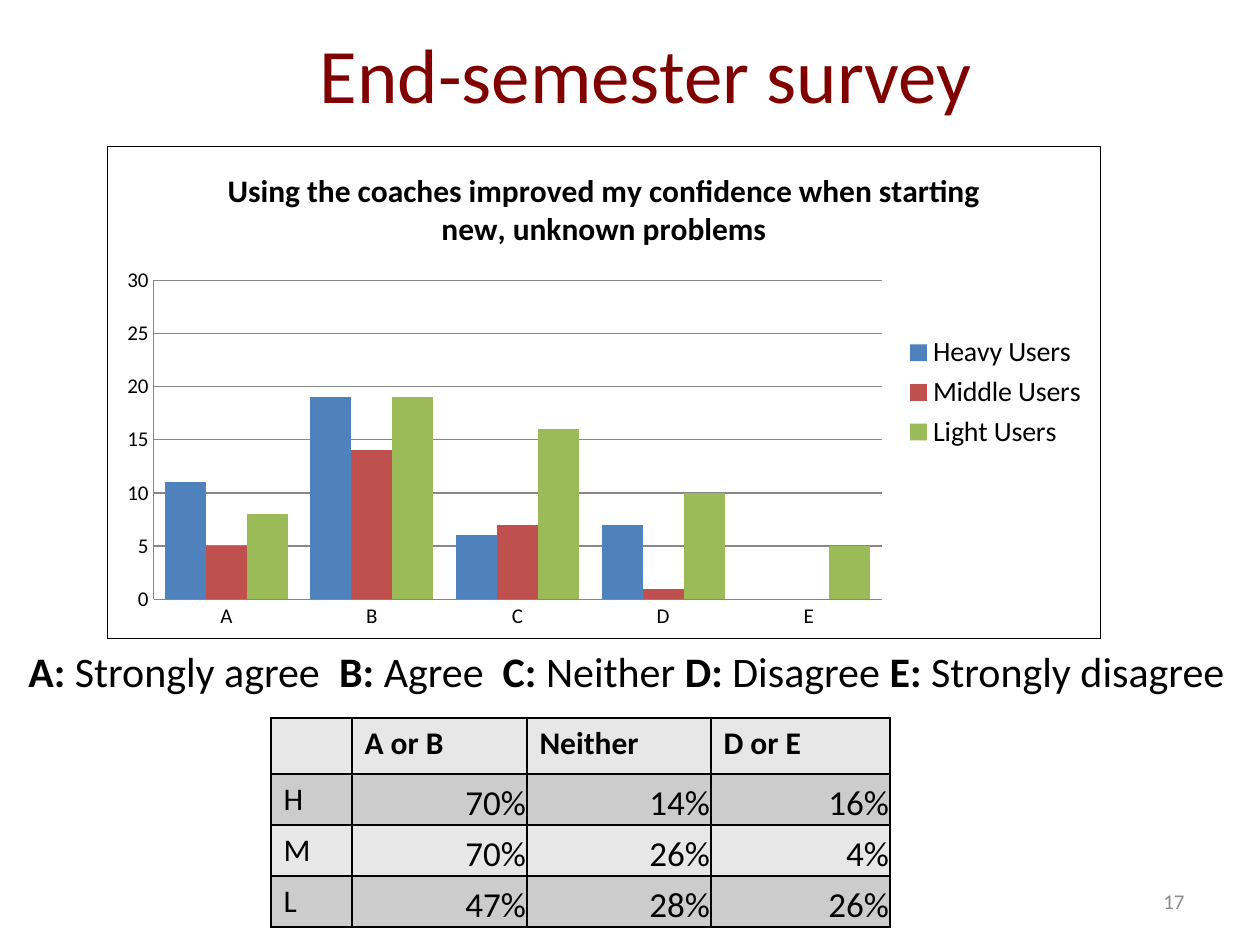
from dataclasses import dataclass
from typing import NamedTuple

from lxml.etree import SubElement
from pptx import Presentation
from pptx.chart.chart import Chart
from pptx.chart.data import CategoryChartData
from pptx.dml.color import RGBColor
from pptx.enum.chart import XL_CHART_TYPE, XL_LEGEND_POSITION, XL_TICK_MARK
from pptx.enum.text import MSO_ANCHOR, PP_ALIGN
from pptx.oxml import parse_xml
from pptx.oxml.ns import nsdecls, qn
from pptx.slide import Slide
from pptx.table import _Cell
from pptx.text.text import Font, _Paragraph
from pptx.util import Emu, Pt

PX_PER_INCH = 126


@dataclass(frozen=True)
class Theme:
    font: str = "Calibri"
    title: str = "800000"
    ink: str = "000000"
    muted: str = "8C8C8C"
    grid: str = "878787"
    light_row: str = "E7E7E7"
    dark_row: str = "CCCCCC"
    title_size: int = 44
    key_size: int = 24
    percent_size: int = 20
    label_size: int = 18
    legend_size: int = 16
    small_size: int = 12


class Box(NamedTuple):
    left: int
    top: int
    width: int
    height: int


class Series(NamedTuple):
    name: str
    values: tuple[int, ...]
    color: str


class Answer(NamedTuple):
    letter: str
    meaning: str


THEME = Theme()
TITLE_BOX = Box(64, 0, 1164, 146)
NUMBER_BOX = Box(903, 876, 294, 50)
CHART_BOX = Box(107, 146, 994, 493)
PLOT_BOX = Box(46, 134, 729, 320)  # inside the chart
KEY_BOX = Box(16, 639, 1237, 63)
TABLE_BOX = Box(271, 718, 619, 209)
COLUMN_WIDTHS = (81, 175, 184, 179)
ROW_HEIGHTS = (56, 51, 51, 51)

CATEGORIES = ("A", "B", "C", "D", "E")
SERIES = (
    Series("Heavy Users", (11, 19, 6, 7, 0), "4F81BD"),
    Series("Middle Users", (5, 14, 7, 1, 0), "C0504D"),
    Series("Light Users", (8, 19, 16, 10, 5), "9BBB59"),
)
ANSWERS = (
    Answer("A:", " Strongly agree  "),
    Answer("B:", " Agree  "),
    Answer("C:", " Neither "),
    Answer("D:", " Disagree "),
    Answer("E:", " Strongly disagree"),
)
TABLE_ROWS = (
    ("", "A or B", "Neither", "D or E"),
    ("H", "70%", "14%", "16%"),
    ("M", "70%", "26%", "4%"),
    ("L", "47%", "28%", "26%"),
)


def px(length: int) -> Emu:
    return Emu(round(length * 914400 / PX_PER_INCH))


def emu_box(box: Box) -> list[Emu]:
    return [px(length) for length in box]


def style_font(font: Font, size: int, color: str = THEME.ink, bold: bool = False) -> None:
    font.name = THEME.font
    font.size = Pt(size)
    font.bold = bold
    font.color.rgb = RGBColor.from_string(color)


def add_span(para: _Paragraph, text: str, size: int, color: str = THEME.ink, bold: bool = False) -> None:
    span = para.add_run()
    span.text = text
    style_font(span.font, size, color, bold)


def add_title(slide: Slide) -> None:
    title = slide.shapes.title
    title.left, title.top, title.width, title.height = emu_box(TITLE_BOX)
    title.text_frame.text = "End-semester survey"
    title.text_frame.vertical_anchor = MSO_ANCHOR.MIDDLE
    para = title.text_frame.paragraphs[0]
    para.alignment = PP_ALIGN.CENTER
    style_font(para.runs[0].font, THEME.title_size, THEME.title)


def frame_chart(chart: Chart) -> None:
    """Outline the chart area and fix the inner plot rectangle."""
    chart_part = chart.element.find(qn("c:chart"))
    chart_part.addnext(parse_xml(
        f'<c:spPr {nsdecls("c", "a")}><a:noFill/><a:ln w="9525"><a:solidFill>'
        f'<a:srgbClr val="{THEME.ink}"/></a:solidFill></a:ln></c:spPr>'
    ))
    plot_area = chart_part.find(qn("c:plotArea"))
    for layout in plot_area.findall(qn("c:layout")):
        plot_area.remove(layout)
    layout = parse_xml(f'<c:layout {nsdecls("c")}/>')
    plot_area.insert(0, layout)
    manual = SubElement(layout, qn("c:manualLayout"))
    settings = {
        "layoutTarget": "inner", "xMode": "edge", "yMode": "edge",
        "x": PLOT_BOX.left / CHART_BOX.width, "y": PLOT_BOX.top / CHART_BOX.height,
        "w": PLOT_BOX.width / CHART_BOX.width, "h": PLOT_BOX.height / CHART_BOX.height,
    }
    for name, value in settings.items():
        SubElement(manual, qn(f"c:{name}")).set("val", str(value))


def add_survey_chart(slide: Slide) -> None:
    data = CategoryChartData()
    data.categories = CATEGORIES
    for series in SERIES:
        data.add_series(series.name, series.values)
    chart = slide.shapes.add_chart(XL_CHART_TYPE.COLUMN_CLUSTERED, *emu_box(CHART_BOX), data).chart
    style_font(chart.font, THEME.small_size)

    chart.has_title = True
    title_frame = chart.chart_title.text_frame
    title_frame.text = "Using the coaches improved my confidence when starting new, unknown problems"
    style_font(title_frame.paragraphs[0].runs[0].font, THEME.label_size, bold=True)
    chart.chart_title.include_in_layout = False

    chart.has_legend = True
    chart.legend.position = XL_LEGEND_POSITION.RIGHT
    chart.legend.include_in_layout = False
    style_font(chart.legend.font, THEME.legend_size)

    plot = chart.plots[0]
    plot.gap_width = 55
    plot.overlap = 0
    plot.vary_by_categories = False
    for bars, series in zip(plot.series, SERIES):
        bars.format.fill.solid()
        bars.format.fill.fore_color.rgb = RGBColor.from_string(series.color)

    value_axis = chart.value_axis
    value_axis.minimum_scale, value_axis.maximum_scale, value_axis.major_unit = 0, 30, 5
    value_axis.has_major_gridlines = True
    for axis in (chart.category_axis, value_axis):
        axis.major_tick_mark = XL_TICK_MARK.NONE
    for lines in (chart.category_axis, value_axis, value_axis.major_gridlines):
        lines.format.line.color.rgb = RGBColor.from_string(THEME.grid)
        lines.format.line.width = Pt(0.75)
    frame_chart(chart)


def add_answer_key(slide: Slide) -> None:
    frame = slide.shapes.add_textbox(*emu_box(KEY_BOX)).text_frame
    frame.word_wrap = False
    for answer in ANSWERS:
        add_span(frame.paragraphs[0], answer.letter, THEME.key_size, bold=True)
        add_span(frame.paragraphs[0], answer.meaning, THEME.key_size)


def outline_cell(cell: _Cell) -> None:
    properties = cell._tc.get_or_add_tcPr()
    for position, side in enumerate(("lnL", "lnR", "lnT", "lnB")):
        properties.insert(position, parse_xml(
            f'<a:{side} {nsdecls("a")} w="12700"><a:solidFill>'
            f'<a:srgbClr val="{THEME.ink}"/></a:solidFill></a:{side}>'
        ))


def fill_cell(cell: _Cell, text: str, row: int, column: int) -> None:
    cell.fill.solid()
    cell.fill.fore_color.rgb = RGBColor.from_string(THEME.dark_row if row % 2 else THEME.light_row)
    outline_cell(cell)
    para = cell.text_frame.paragraphs[0]
    is_percent = row > 0 and column > 0
    if is_percent:
        cell.vertical_anchor = MSO_ANCHOR.BOTTOM
        cell.margin_left = cell.margin_right = cell.margin_top = px(1)
        cell.margin_bottom = 0
        para.alignment = PP_ALIGN.RIGHT
    if text:
        add_span(para, text, THEME.percent_size if is_percent else THEME.label_size, bold=row == 0)


def add_share_table(slide: Slide) -> None:
    table = slide.shapes.add_table(len(ROW_HEIGHTS), len(COLUMN_WIDTHS), *emu_box(TABLE_BOX)).table
    for column, width in zip(table.columns, COLUMN_WIDTHS):
        column.width = px(width)
    for row, height in zip(table.rows, ROW_HEIGHTS):
        row.height = px(height)
    for row, texts in enumerate(TABLE_ROWS):
        for column, text in enumerate(texts):
            fill_cell(table.cell(row, column), text, row, column)


def add_page_number(slide: Slide) -> None:
    frame = slide.shapes.add_textbox(*emu_box(NUMBER_BOX)).text_frame
    frame.word_wrap = True
    frame.vertical_anchor = MSO_ANCHOR.MIDDLE
    frame.paragraphs[0].alignment = PP_ALIGN.RIGHT
    add_span(frame.paragraphs[0], "17", THEME.small_size, THEME.muted)


def main() -> None:
    deck = Presentation()
    deck.slide_width, deck.slide_height = px(1260), px(945)
    slide = deck.slides.add_slide(deck.slide_layouts.get_by_name("Title Only"))
    add_title(slide)
    add_page_number(slide)
    add_survey_chart(slide)
    add_answer_key(slide)
    add_share_table(slide)
    deck.save("out.pptx")


if __name__ == "__main__":
    main()
